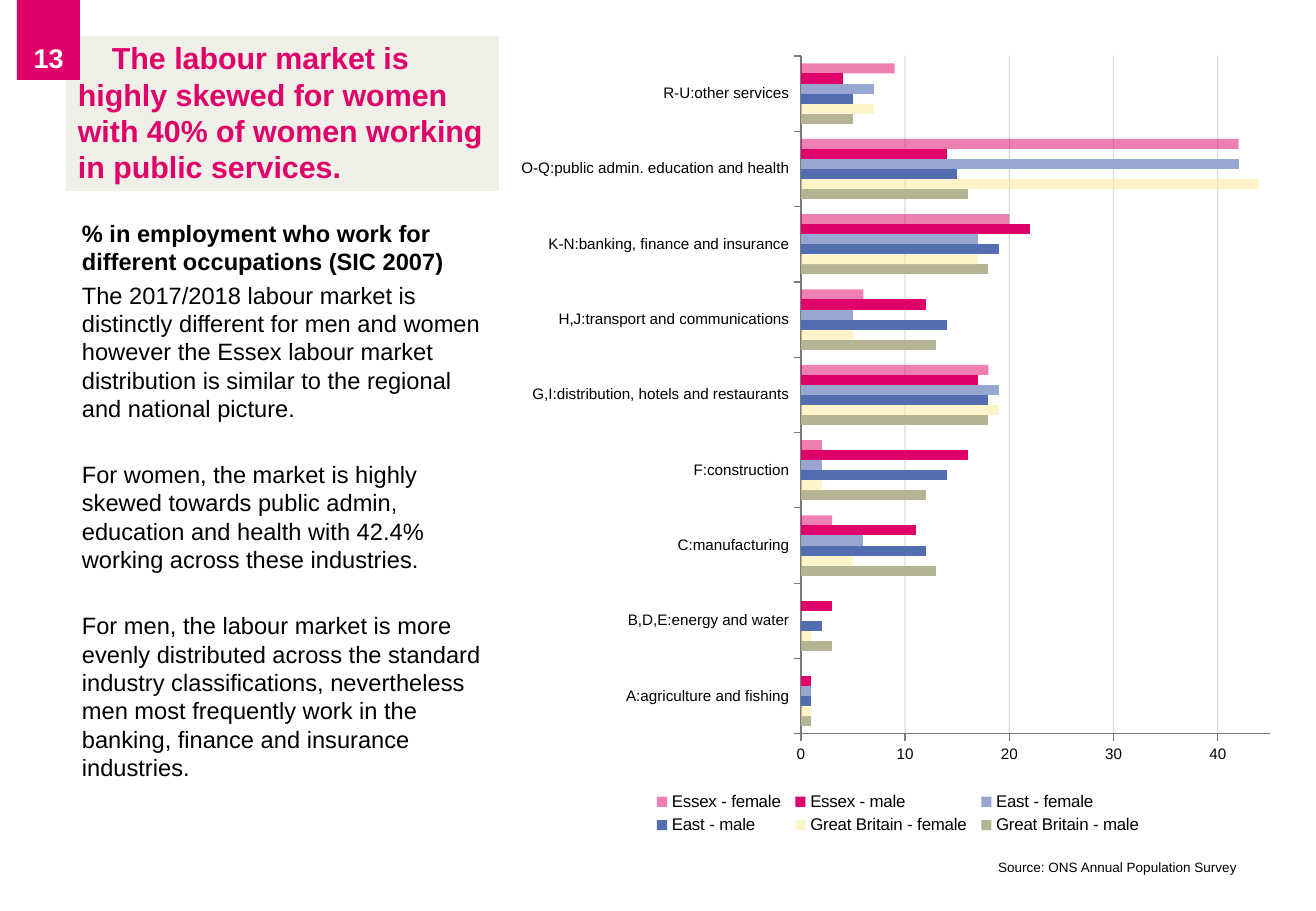
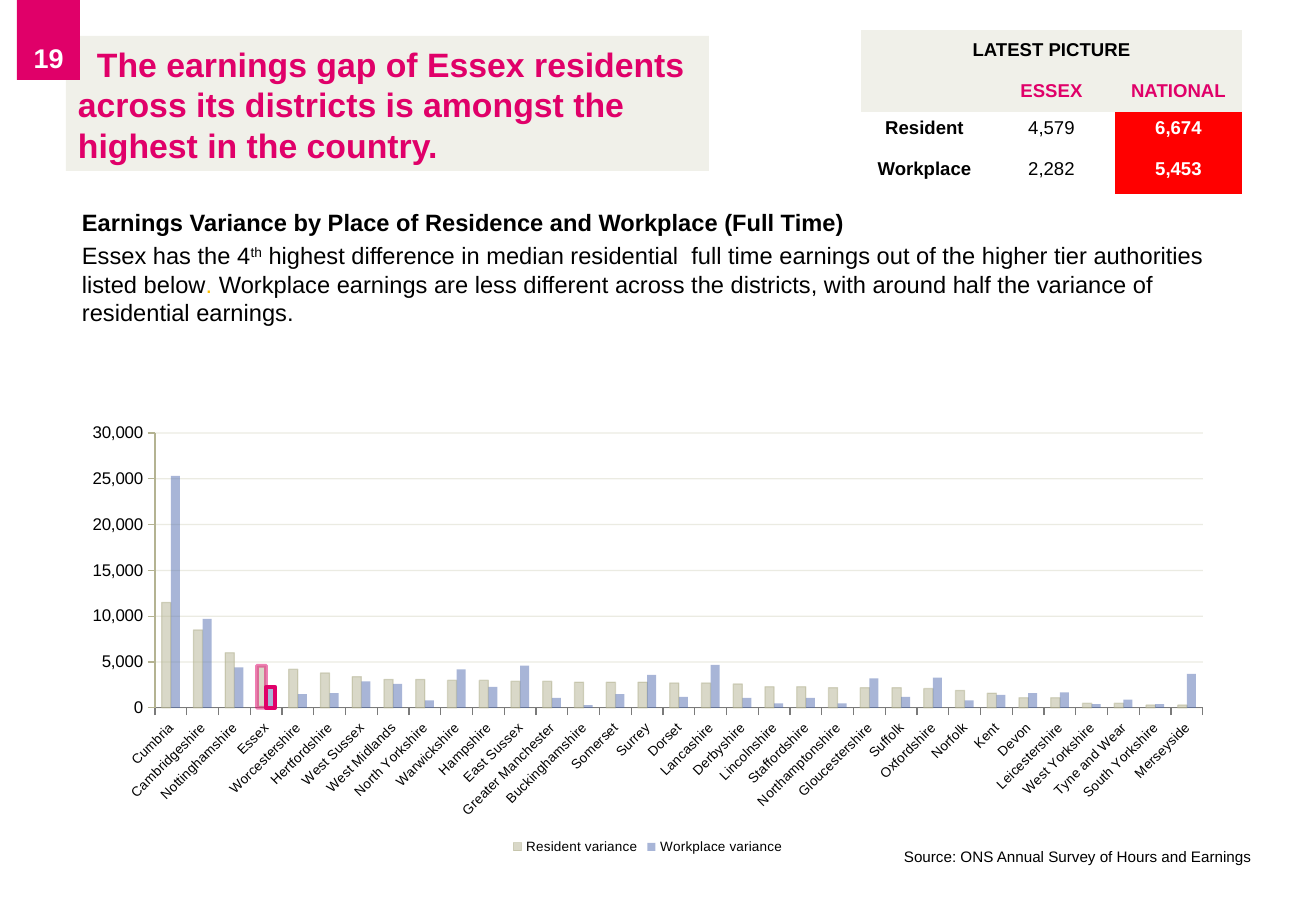
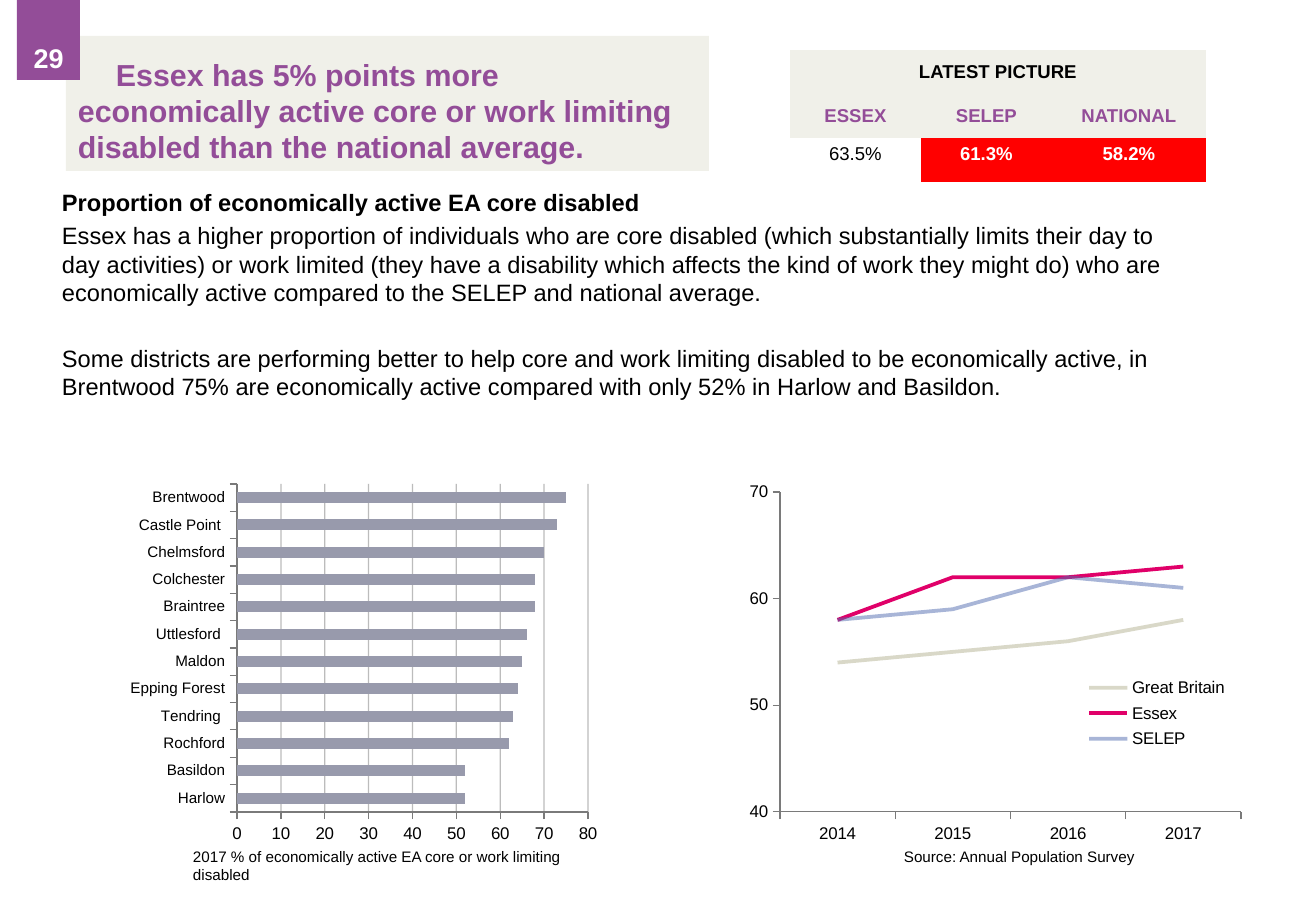
from lxml import etree
from pptx import Presentation
from pptx.chart.data import CategoryChartData
from pptx.dml.color import RGBColor
from pptx.enum.chart import XL_CHART_TYPE, XL_LEGEND_POSITION, XL_MARKER_STYLE, XL_TICK_MARK
from pptx.enum.shapes import MSO_SHAPE
from pptx.enum.text import MSO_ANCHOR, PP_ALIGN
from pptx.oxml.ns import qn
from pptx.util import Pt

BAR = XL_CHART_TYPE.BAR_CLUSTERED
COLUMN = XL_CHART_TYPE.COLUMN_CLUSTERED
LINE = XL_CHART_TYPE.LINE
LEGEND_BOTTOM, LEGEND_RIGHT = XL_LEGEND_POSITION.BOTTOM, XL_LEGEND_POSITION.RIGHT
NO_MARKER = XL_MARKER_STYLE.NONE
TICK_OUT, TICK_NONE = XL_TICK_MARK.OUTSIDE, XL_TICK_MARK.NONE
RECTANGLE = MSO_SHAPE.RECTANGLE
TOP, MIDDLE, BOTTOM = MSO_ANCHOR.TOP, MSO_ANCHOR.MIDDLE, MSO_ANCHOR.BOTTOM
LEFT, CENTER, RIGHT = PP_ALIGN.LEFT, PP_ALIGN.CENTER, PP_ALIGN.RIGHT

PX = 7526  # EMU in one px
SLIDE_WIDTH, SLIDE_HEIGHT = 1316, 911
FONT = "Arial"
PINK, PURPLE, BAND, RED, GOLD = "E00069", "934D98", "F0F0E9", "FF0000", "FFC000"
BLACK, WHITE, GREY = "000000", "FFFFFF", "7A7A7A"
OLIVE, BLUE, PALE_BLUE, CREAM, SLATE = "B4B392", "526DB0", "97A7D0", "FFE996", "989AAC"
NO_GRID_STYLE = "{2D5ABB26-0587-4C30-8999-92F81FD0307C}"
BODY_GAP, BLANK_LINE_GAP = 2.8, 22.3  # points before a body paragraph


def rgb(color):
    return RGBColor.from_string(color)


def place(box):
    return [length * PX for length in box]


def paint(fill, color, opacity=100):
    fill.solid()
    fill.fore_color.rgb = rgb(color)
    if opacity < 100:
        color_element = fill._xPr.find(qn("a:solidFill"))[0]
        etree.SubElement(color_element, qn("a:alpha")).set("val", str(opacity * 1000))


def stroke(line, color, width=0.75, opacity=100):
    line.width = Pt(width)
    paint(line.fill, color, opacity)


def style_font(font, size, color=BLACK, bold=False):
    font.name, font.size, font.bold = FONT, Pt(size), bold
    font.color.rgb = rgb(color)


# Text parts

def add_rectangle(slide, box, fill, text, size, color, align):
    shape = slide.shapes.add_shape(RECTANGLE, *place(box))
    shape.shadow.inherit = False
    paint(shape.fill, fill)
    shape.line.fill.background()
    shape.text_frame.word_wrap = True
    shape.text_frame.vertical_anchor = BOTTOM
    paragraph = shape.text_frame.paragraphs[0]
    paragraph.text, paragraph.alignment = text, align
    style_font(paragraph.font, size, color, True)
    return paragraph


def add_heading(slide, box, number, title, size, indent, accent):
    """Title band with an indented first line, and the page number tab."""
    paragraph = add_rectangle(slide, box, BAND, title, size, accent, LEFT)
    properties = paragraph._p.get_or_add_pPr()
    properties.set("marL", "0")
    properties.set("indent", str(indent * PX))
    add_rectangle(slide, (17, 0, 63, 80), accent, number, 16, WHITE, CENTER)


def add_text_box(slide, box):
    frame = slide.shapes.add_textbox(*place(box)).text_frame
    frame.word_wrap = True
    return frame


def add_body(slide, box, heading, paragraphs):
    """Bold heading, then paragraphs one blank line apart."""
    frame = add_text_box(slide, box)
    for index, text in enumerate([heading] + paragraphs):
        paragraph = frame.add_paragraph() if index else frame.paragraphs[0]
        paragraph.text = text
        paragraph.space_before = Pt(BLANK_LINE_GAP if index > 1 else BODY_GAP)
        style_font(paragraph.font, 14, bold=index == 0)
    return frame


def add_caption(slide, box, text, size=9, align=LEFT):
    paragraph = add_text_box(slide, box).paragraphs[0]
    paragraph.text, paragraph.alignment = text, align
    style_font(paragraph.font, size)


# Table

def fill_cell(cell, text, color, bold, fill, anchor):
    if fill:
        paint(cell.fill, fill)
    else:
        cell.fill.background()
    cell.vertical_anchor = anchor
    paragraph = cell.text_frame.paragraphs[0]
    paragraph.text, paragraph.alignment = text, CENTER
    style_font(paragraph.font, 11, color, bold)


def add_latest_picture(slide, left, top, widths, row_height, accent, headers, rows):
    """Two banded header rows; every comparison with ESSEX is on red."""
    row_count = len(rows) + 2
    box = (left, top, sum(widths), row_height * row_count)
    table = slide.shapes.add_table(row_count, len(widths), *place(box)).table
    table.first_row = table.horz_banding = False
    table._tbl.tblPr.find(qn("a:tableStyleId")).text = NO_GRID_STYLE
    for column, width in zip(table.columns, widths):
        column.width = width * PX
    for row in table.rows:
        row.height = row_height * PX
    table.cell(0, 0).merge(table.cell(0, len(widths) - 1))
    fill_cell(table.cell(0, 0), "LATEST PICTURE", BLACK, True, BAND, MIDDLE)
    for column, header in enumerate(headers):
        fill_cell(table.cell(1, column), header, accent, True, BAND, MIDDLE)
        compared = header not in ("", "ESSEX")
        for row, values in enumerate(rows, start=2):
            fill_cell(table.cell(row, column), values[column], WHITE if compared else BLACK,
                      header != "ESSEX", RED if compared else None, TOP)


# Charts

def make_layout(chart_box, part_box, inner):
    """Manual layout of a part, as shares of the chart box."""
    left, top, width, height = chart_box
    layout = etree.Element(qn("c:layout"))
    manual = etree.SubElement(layout, qn("c:manualLayout"))
    settings = [("layoutTarget", "inner")] if inner else []
    settings += [("xMode", "edge"), ("yMode", "edge"),
                 ("x", (part_box[0] - left) / width), ("y", (part_box[1] - top) / height),
                 ("w", part_box[2] / width), ("h", part_box[3] / height)]
    for name, value in settings:
        etree.SubElement(manual, qn("c:" + name)).set("val", str(value))
    return layout


def add_chart(slide, kind, box, plot_box, categories, series, scale, label_sizes, grid=None):
    """series: (name, values, color, opacity); scale: minimum, maximum, step."""
    data = CategoryChartData()
    data.categories = categories
    for name, values, _, _ in series:
        data.add_series(name, values)
    chart = slide.shapes.add_chart(kind, *place(box), data).chart
    chart.has_title = chart.has_legend = False
    style_font(chart.font, 10)
    plot_area = chart._chartSpace.xpath("c:chart/c:plotArea")[0]
    for layout in plot_area.findall(qn("c:layout")):
        plot_area.remove(layout)
    plot_area.insert(0, make_layout(box, plot_box, True))

    # Axes
    for axis, size in zip((chart.category_axis, chart.value_axis), label_sizes):
        axis.major_tick_mark, axis.minor_tick_mark = TICK_OUT, TICK_NONE
        axis.has_major_gridlines = False
        stroke(axis.format.line, GREY)
        style_font(axis.tick_labels.font, size)
    axis = chart.value_axis
    axis.minimum_scale, axis.maximum_scale, axis.major_unit = scale
    axis.tick_labels.number_format = "#,##0"
    axis.tick_labels.number_format_is_linked = False
    if grid:
        axis.has_major_gridlines = True
        stroke(axis.major_gridlines.format.line, grid[0], opacity=grid[1])

    # Series
    plot = chart.plots[0]
    plot.vary_by_categories = False
    if kind != LINE:
        plot.gap_width = 150
    for item, (_, _, color, opacity) in zip(plot.series, series):
        if kind == LINE:
            item.smooth = False
            item.marker.style = NO_MARKER
            stroke(item.format.line, color, 2.25, opacity)
        else:
            paint(item.format.fill, color, opacity)
    return chart


def add_legend(chart, chart_box, legend_box, position, size, overlay=False):
    chart.has_legend = True
    legend = chart.legend
    legend.position = position
    legend.include_in_layout = overlay
    style_font(legend.font, size)
    layout = make_layout(chart_box, legend_box, False)
    legend._element.find(qn("c:legendPos")).addnext(layout)


# Slides

def build_employment(slide):
    add_heading(slide, (66, 36, 433, 155), "13",
                "The labour market is highly skewed for women with 40% of women "
                "working in public services.", 18, 34, PINK)
    add_body(slide, (70, 213, 433, 650),
             "% in employment who work for different occupations (SIC 2007)", [
                 "The 2017/2018 labour market is distinctly different for men and women however "
                 "the Essex labour market distribution is similar to the regional and national "
                 "picture.",
                 "For women, the market is highly skewed towards public admin, education and "
                 "health with 42.4% working across these industries.",
                 "For men, the labour market is more evenly distributed across the standard "
                 "industry classifications, nevertheless men most frequently work in the "
                 "banking, finance and insurance industries."])
    industries = ["A:agriculture and fishing", "B,D,E:energy and water", "C:manufacturing",
                  "F:construction", "G,I:distribution, hotels and restaurants",
                  "H,J:transport and communications", "K-N:banking, finance and insurance",
                  "O-Q:public admin. education and health", "R-U:other services"]
    series = [
        ("Great Britain - male", [1, 3, 13, 12, 18, 13, 18, 16, 5], OLIVE, 100),
        ("Great Britain - female", [1, 1, 5, 2, 19, 5, 17, 44, 7], CREAM, 50),
        ("East - male", [1, 2, 12, 14, 18, 14, 19, 15, 5], BLUE, 100),
        ("East - female", [1, 0, 6, 2, 19, 5, 17, 42, 7], PALE_BLUE, 100),
        ("Essex - male", [1, 3, 11, 16, 17, 12, 22, 14, 4], PINK, 100),
        ("Essex - female", [None, None, 3, 2, 18, 6, 20, 42, 9], PINK, 50)]
    box = (507, 40, 780, 799)
    chart = add_chart(slide, BAR, box, (801, 56, 469, 678), industries, series,
                      (0, 45, 10), (9, 9), (GREY, 25))
    add_legend(chart, box, (648, 788, 500, 51), LEGEND_BOTTOM, 10)
    add_caption(slide, (899, 853, 350, 27), "Source: ONS Annual Population Survey", 8, RIGHT)


def build_earnings(slide):
    add_heading(slide, (66, 36, 643, 135), "19",
                "The earnings gap of Essex residents across its districts is amongst the "
                "highest in the country.", 20, 19, PINK)
    add_latest_picture(slide, 861, 30, (127, 127, 127), 41, PINK, ("", "ESSEX", "NATIONAL"),
                       [("Resident", "4,579", "6,674"), ("Workplace", "2,282", "5,453")])
    frame = add_body(slide, (70, 202, 1156, 203),
                     "Earnings Variance by Place of Residence and Workplace (Full Time)",
                     ["Essex has the 4"])
    paragraph = frame.paragraphs[1]
    for text in ("th", " highest difference in median residential  full time earnings out of the "
                 "higher tier authorities listed below", ". ",
                 "Workplace earnings are less different across the districts, with around half "
                 "the variance of residential earnings."):
        paragraph.add_run().text = text
    paragraph.runs[1].font._element.set("baseline", "30000")
    paragraph.runs[3].font.color.rgb = rgb(GOLD)

    counties = [
        "Cumbria", "Cambridgeshire", "Nottinghamshire", "Essex", "Worcestershire",
        "Hertfordshire", "West Sussex", "West Midlands", "North Yorkshire", "Warwickshire",
        "Hampshire", "East Sussex", "Greater Manchester", "Buckinghamshire", "Somerset",
        "Surrey", "Dorset", "Lancashire", "Derbyshire", "Lincolnshire", "Staffordshire",
        "Northamptonshire", "Gloucestershire", "Suffolk", "Oxfordshire", "Norfolk", "Kent",
        "Devon", "Leicestershire", "West Yorkshire", "Tyne and Wear", "South Yorkshire",
        "Merseyside"]
    resident = [11500, 8500, 6000, 4600, 4200, 3800, 3400, 3100, 3100, 3000, 3000, 2900, 2900,
                2800, 2800, 2800, 2700, 2700, 2600, 2300, 2300, 2200, 2200, 2200, 2100, 1900,
                1600, 1100, 1100, 500, 500, 300, 300]
    workplace = [25300, 9700, 4400, 2300, 1500, 1600, 2900, 2600, 800, 4200, 2300, 4600, 1100,
                 300, 1500, 3600, 1200, 4700, 1100, 500, 1100, 500, 3200, 1200, 3300, 800,
                 1400, 1600, 1700, 400, 900, 400, 3700]
    box = (70, 416, 1157, 446)
    chart = add_chart(slide, COLUMN, box, (155, 433, 1048, 275), counties,
                      [("Resident variance", resident, OLIVE, 50),
                       ("Workplace variance", workplace, BLUE, 50)],
                      (0, 30000, 5000), (8, 10), (OLIVE, 25))
    add_legend(chart, box, (508, 836, 280, 22), LEGEND_BOTTOM, 8)
    stroke(chart.value_axis.format.line, OLIVE)
    chart.category_axis._element.xpath("c:txPr/a:bodyPr")[0].set("rot", "-2700000")
    # Essex is outlined
    all_series = chart.plots[0].series
    stroke(all_series[0].format.line, OLIVE, opacity=50)
    for series, color, opacity in zip(all_series, (OLIVE, BLUE), (50, 100)):
        essex = series.points[counties.index("Essex")].format
        paint(essex.fill, color, 50)
        stroke(essex.line, PINK, 2.25, opacity)
    add_caption(slide, (892, 841, 420, 30), "Source: ONS Annual Survey of Hours and Earnings")


def build_disability(slide):
    add_heading(slide, (66, 36, 643, 135), "29",
                "Essex has 5% points more economically active core or work limiting disabled "
                "than the national average.", 18, 38, PURPLE)
    add_latest_picture(slide, 790, 50, (131, 131, 154), 44, PURPLE,
                       ("ESSEX", "SELEP", "NATIONAL"), [("63.5%", "61.3%", "58.2%")])
    add_body(slide, (50, 182, 1156, 334), "Proportion of economically active EA core disabled", [
        "Essex has a higher proportion of individuals who are core disabled (which substantially "
        "limits their day to day activities) or work limited (they have a disability which "
        "affects the kind of work they might do) who are economically active compared to the "
        "SELEP and national average.",
        "Some districts are performing better to help core and work limiting disabled to be "
        "economically active, in Brentwood 75% are economically active compared with only 52% "
        "in Harlow and Basildon."])
    districts = ["Harlow", "Basildon", "Rochford", "Tendring ", "Epping Forest", "Maldon",
                 "Uttlesford ", "Braintree", "Colchester", "Chelmsford", "Castle Point ",
                 "Brentwood"]
    rates = [52, 52, 62, 63, 64, 65, 66, 68, 68, 70, 73, 75]
    add_chart(slide, BAR, (120, 476, 487, 375), (237, 484, 351, 328), districts,
              [("Series 1", rates, SLATE, 100)], (0, 80, 10), (9, 10), (GREY, 50))
    add_caption(slide, (181, 841, 416, 48),
                "2017 % of economically active EA core or work limiting disabled")
    box = (739, 476, 513, 375)
    chart = add_chart(slide, LINE, box, (780, 492, 461, 320), ["2014", "2015", "2016", "2017"],
                      [("Great Britain", [54, 55, 56, 58], OLIVE, 50),
                       ("Essex", [58, 62, 62, 63], PINK, 100),
                       ("SELEP", [58, 59, 62, 61], BLUE, 50)], (40, 70, 10), (10, 10))
    add_legend(chart, box, (1082, 672, 150, 83), LEGEND_RIGHT, 10, True)
    add_caption(slide, (892, 841, 420, 30), "Source: Annual Population Survey")


def main():
    presentation = Presentation()
    presentation.slide_width, presentation.slide_height = SLIDE_WIDTH * PX, SLIDE_HEIGHT * PX
    for build in (build_employment, build_earnings, build_disability):
        build(presentation.slides.add_slide(presentation.slide_layouts[6]))
    presentation.save("out.pptx")


if __name__ == "__main__":
    main()
